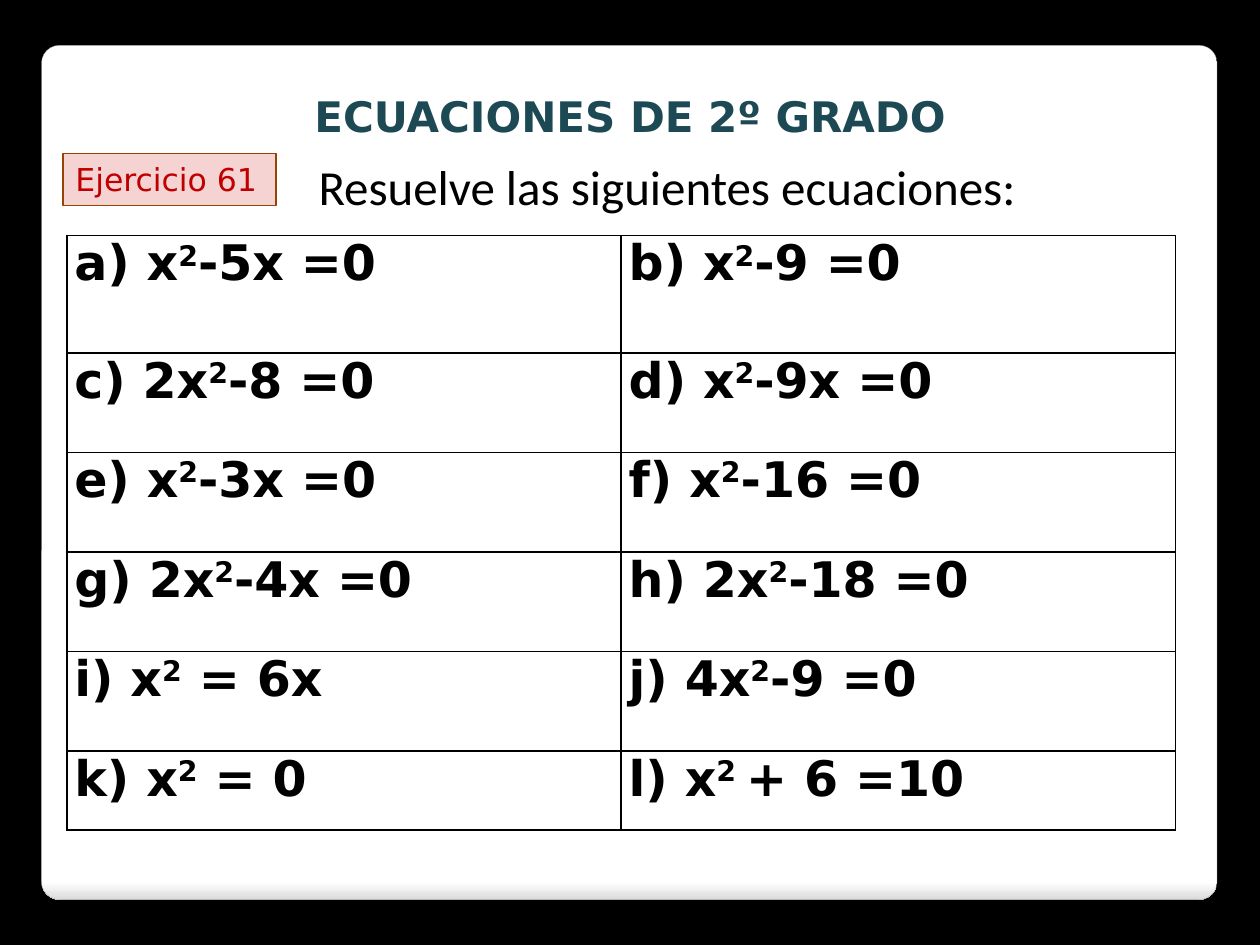
from lxml.etree import SubElement
from pptx import Presentation
from pptx.dml.color import RGBColor
from pptx.enum.shapes import MSO_SHAPE as Shape
from pptx.enum.text import MSO_ANCHOR as Anchor, PP_ALIGN as Align
from pptx.oxml.ns import qn
from pptx.util import Inches, Pt

EQUATIONS = [
    ("a) x^2^-5x =0", "b) x^2^-9 =0"),
    ("c) 2x^2^-8 =0", "d) x^2^-9x =0"),
    ("e) x^2^-3x =0", "f) x^2^-16 =0"),
    ("g) 2x^2^-4x =0", "h) 2x^2^-18 =0"),
    ("i) x^2^ = 6x", "j) 4x^2^-9 =0"),
    ("k) x^2^ = 0", "l) x^2 ^+ 6 =10"),
]
ROW_HEIGHTS = [0.93] + [0.79] * 4 + [0.63]


def color(value):
    return RGBColor.from_string(value)


def write(frame, text, size=28, font="DejaVu Sans", fill="000000", bold=False,
          align=Align.LEFT, spacing=None, gap=0):
    """Fill the frame's first paragraph; text between carets is superscript."""
    frame.word_wrap = True
    frame.vertical_anchor = Anchor.TOP
    para = frame.paragraphs[0]
    para.alignment = align
    para.space_before = para.space_after = Pt(gap)
    if spacing:
        para.line_spacing = spacing
    for index, piece in enumerate(text.split("^")):
        span = para.add_run()
        span.text = piece
        span.font.size = Pt(size)
        span.font.name = font
        span.font.bold = bold
        span.font.color.rgb = color(fill)
        if index % 2:
            span.font._element.set("baseline", "30000")


def add_borders(cell, line="000000", width=1):
    properties = cell._tc.get_or_add_tcPr()
    for side in ("lnL", "lnR", "lnT", "lnB"):
        border = SubElement(properties, qn(f"a:{side}"), w=str(Pt(width)))
        solid = SubElement(border, qn("a:solidFill"))
        SubElement(solid, qn("a:srgbClr"), val=line)


class Builder:
    title_fill = "1C4954"
    label_fill, label_line, label_text = "F5D3D3", "964305", "C00000"

    def __init__(self, deck):
        self.page = deck.slides.add_slide(deck.slide_layouts[5])
        background = self.page.background.fill
        background.solid()
        background.fore_color.rgb = color("000000")

    def shape(self, kind, area, line, width):
        box = self.page.shapes.add_shape(kind, *map(Inches, area))
        box.shadow.inherit = False
        box.line.color.rgb = color(line)
        box.line.width = Pt(width)
        return box

    def card(self, *area):
        """Rounded white panel behind everything else."""
        panel = self.shape(Shape.ROUNDED_RECTANGLE, area, "A4A4A4", 0.16)
        panel.adjustments[0] = 0.021
        panel.fill.gradient()
        panel.fill.gradient_angle = 270
        stops = panel.fill.gradient_stops
        for stop, position, shade in zip(stops, (0.98, 1), ("FFFFFF", "DADADA")):
            stop.position = position
            stop.color.rgb = color(shade)
        self.page.shapes._spTree.insert(2, panel._element)

    def title(self, text, *area):
        box = self.page.shapes.title
        box.left, box.top, box.width, box.height = map(Inches, area)
        write(box.text_frame, text, size=24, fill=self.title_fill, bold=True,
              align=Align.CENTER)

    def label(self, text, *area):
        box = self.shape(Shape.RECTANGLE, area, self.label_line, 0.75)
        box.fill.solid()
        box.fill.fore_color.rgb = color(self.label_fill)
        write(box.text_frame, text, size=18, fill=self.label_text)

    def text(self, text, *area, **style):
        box = self.page.shapes.add_textbox(*map(Inches, area))
        write(box.text_frame, text, **style)

    def table(self, rows, heights, *area):
        grid = self.page.shapes.add_table(
            len(rows), len(rows[0]), *map(Inches, area)).table
        grid.first_row = grid.horz_banding = False
        for row, height, texts in zip(grid.rows, heights, rows):
            row.height = Inches(height)
            for cell, text in zip(row.cells, texts):
                cell.margin_left = cell.margin_right = Inches(0.06)
                cell.margin_top = cell.margin_bottom = 0
                add_borders(cell)
                cell.fill.solid()
                cell.fill.fore_color.rgb = color("FFFFFF")
                write(cell.text_frame, text, bold=True)


def main():
    deck = Presentation()
    deck.slide_width, deck.slide_height = Inches(10), Inches(7.5)
    builder = Builder(deck)
    builder.card(0.33, 0.36, 9.33, 6.78)
    builder.title("ECUACIONES DE 2º GRADO", 0.39, 0.67, 9.22, 0.5)
    builder.label("Ejercicio 61", 0.5, 1.22, 1.69, 0.41)
    builder.text("Resuelve las siguientes ecuaciones:", 2.43, 1.12, 7.57, 0.61,
                 font="Calibri", align=Align.JUSTIFY, spacing=1.15, gap=6)
    builder.table(EQUATIONS, ROW_HEIGHTS, 0.53, 1.87, 8.8, sum(ROW_HEIGHTS))
    deck.save("out.pptx")


if __name__ == "__main__":
    main()
